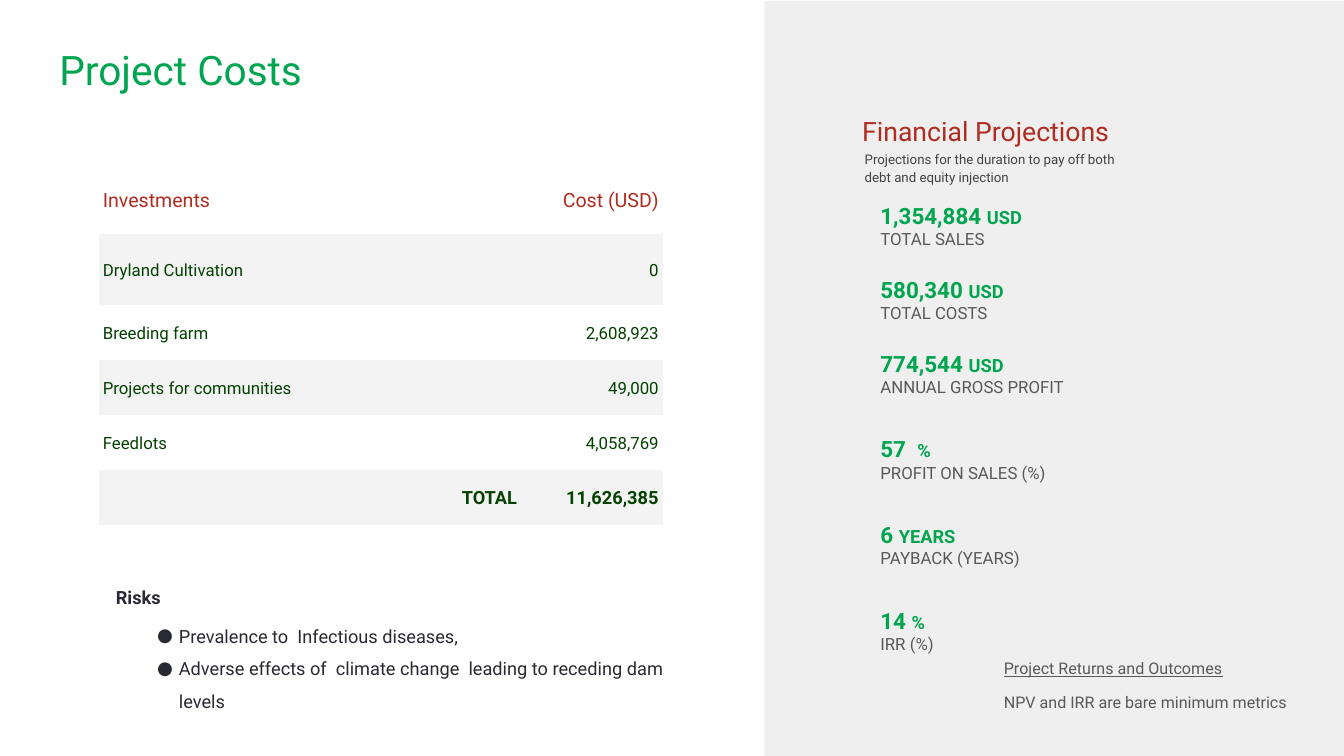
import pptx
import pptx.dml.color
import pptx.enum.shapes
import pptx.enum.text
import pptx.oxml
import pptx.oxml.ns
import pptx.util

COLORS = {
    "green": "00A54F", "red": "B02C20", "dark_green": "034101", "gray": "595959",
    "charcoal": "434343", "ink": "292934", "panel": "9E9E9E", "band": "F3F3F3",
}
RIGHT = pptx.enum.text.PP_ALIGN.RIGHT
MIDDLE = pptx.enum.text.MSO_ANCHOR.MIDDLE

deck = pptx.Presentation()
deck.slide_width = pptx.util.Inches(26.67)
deck.slide_height = pptx.util.Inches(15)
page = deck.slides.add_slide(deck.slide_layouts[6])
column = deck.slide_width / 100
row = deck.slide_height / 100


def add_box(left, top, width, height, inset_x, inset_y):
    box = page.shapes.add_textbox(
        int(left * column), int(top * row), int(width * column), int(height * row))
    frame = box.text_frame
    frame.word_wrap = True
    frame.margin_left = frame.margin_right = pptx.util.Inches(inset_x)
    frame.margin_top = frame.margin_bottom = pptx.util.Inches(inset_y)
    return frame


def style_text(para, size, color, bold=False, spacing=1.0):
    para.line_spacing = spacing
    for span in para.runs:
        span.font.name = "Roboto"
        span.font.size = pptx.util.Pt(size)
        span.font.bold = bold
        span.font.color.rgb = pptx.dml.color.RGBColor.from_string(COLORS[color])


panel = page.shapes.add_shape(
    pptx.enum.shapes.MSO_SHAPE.RECTANGLE,
    int(56.88 * column), int(0.13 * row), int(43.12 * column), int(99.87 * row))
panel.shadow.inherit = False
panel.line.fill.background()
panel.fill.solid()
panel.fill.fore_color.rgb = pptx.dml.color.RGBColor.from_string(COLORS["panel"])
panel_color = panel.fill._xPr.find(".//" + pptx.oxml.ns.qn("a:srgbClr"))
panel_color.append(pptx.oxml.parse_xml(
    f'<a:alpha {pptx.oxml.ns.nsdecls("a")} val="16000"/>'))

title = add_box(3.41, 4.2, 93.18, 11.13, 0.27, 0.27)
title.text = "Project Costs"
style_text(title.paragraphs[0], 58, "green")

costs = [
    ("Investments", "Cost (USD)"),
    ("Dryland Cultivation", "0"),
    ("Breeding farm", "2,608,923"),
    ("Projects for communities", "49,000"),
    ("Feedlots", "4,058,769"),
    ("TOTAL", "11,626,385"),
]
last = len(costs) - 1
table = page.shapes.add_table(
    len(costs), 2, int(7.35 * column), int(21.67 * row),
    int(41.96 * column), int(47.74 * row)).table
table.first_row = table.horz_banding = False
style_id = table._tbl.tblPr.find(pptx.oxml.ns.qn("a:tableStyleId"))
style_id.text = "{2D5ABB26-0587-4C30-8999-92F81FD0307C}"
for index, share in enumerate((31.42, 10.54)):
    table.columns[index].width = int(share * column)
for line, values in enumerate(costs):
    table.rows[line].height = int((9.33 if line < 2 else 7.27) * row)
    size = {0: 28, last: 26}.get(line, 24)
    for index, value in enumerate(values):
        cell = table.cell(line, index)
        cell.text = value
        cell.vertical_anchor = MIDDLE
        cell.margin_left = cell.margin_right = pptx.util.Inches(0.08)
        cell.margin_top = cell.margin_bottom = pptx.util.Inches(0.06)
        if line % 2:
            cell.fill.solid()
            cell.fill.fore_color.rgb = pptx.dml.color.RGBColor.from_string(COLORS["band"])
        else:
            cell.fill.background()
        para = cell.text_frame.paragraphs[0]
        style_text(para, size, "dark_green" if line else "red", line == last, 1.15)
        if index == 1 or line == last:
            para.alignment = RIGHT

heading = add_box(63.14, 12.8, 31.08, 7.87, 0.27, 0.27)
heading.text = "Financial Projections"
style_text(heading.paragraphs[0], 38, "red", spacing=1.15)

subtitle = add_box(63.97, 19.67, 19.99, 4.93, 0.1, 0.1)
subtitle.vertical_anchor = MIDDLE
subtitle.text = "Projections for the duration to pay off both debt and equity injection"
style_text(subtitle.paragraphs[0], 19, "charcoal", spacing=1.15)

metrics = [
    ("1,354,884 ", "USD", "TOTAL SALES", 9.77),
    ("580,340 ", "USD", "TOTAL COSTS", 9.77),
    ("774,544 ", "USD", "ANNUAL GROSS PROFIT", 11.33),
    ("57  ", "%", "PROFIT ON SALES (%)", 11.33),
    ("6 ", "YEARS", "PAYBACK (YEARS)", 11.33),
    ("14 ", "%", "IRR (%)", 11.33),
]
metric_top = 25.87
for figure, unit, label, step in metrics:
    metric = add_box(64.49, metric_top, 19.39, 9.33, 0.27, 0.13)
    metric.text = figure
    amount = metric.paragraphs[0]
    amount.add_run().text = unit
    style_text(amount, 32, "green", bold=True)
    amount.runs[1].font.size = pptx.util.Pt(26)
    caption = metric.add_paragraph()
    caption.text = label
    style_text(caption, 24, "gray")
    metric_top += step

risks = add_box(8.25, 75.47, 43.34, 18.13, 0.1, 0.1)
risks.text = "Risks"
style_text(risks.paragraphs[0], 26, "ink", bold=True, spacing=1.5)
for text, gap in (
        ("Prevalence to  Infectious diseases,", 8),
        ("Adverse effects of  climate change  leading to receding dam levels", 0)):
    para = risks.add_paragraph()
    para.text = text
    properties = para._p.get_or_add_pPr()
    properties.set("marL", str(pptx.util.Inches(1.25)))
    properties.set("indent", str(pptx.util.Inches(-0.43)))
    for element in (
            f'<a:buClr {{}}><a:srgbClr val="{COLORS["ink"]}"/></a:buClr>',
            '<a:buFont {} typeface="Roboto"/>',
            '<a:buChar {} char="●"/>'):
        properties.append(pptx.oxml.parse_xml(
            element.format(pptx.oxml.ns.nsdecls("a"))))
    style_text(para, 26, "ink", spacing=1.5)
    para.space_before = pptx.util.Pt(gap)

returns = add_box(74.32, 85.13, 24.03, 8.53, 0.1, 0.1)
returns.text = "Project Returns and Outcomes\nNPV and IRR are bare minimum metrics"
for para in returns.paragraphs:
    style_text(para, 23, "gray", spacing=1.5)
returns.paragraphs[0].runs[0].font.underline = True
returns.paragraphs[1].space_before = pptx.util.Pt(8)

deck.save("out.pptx")
